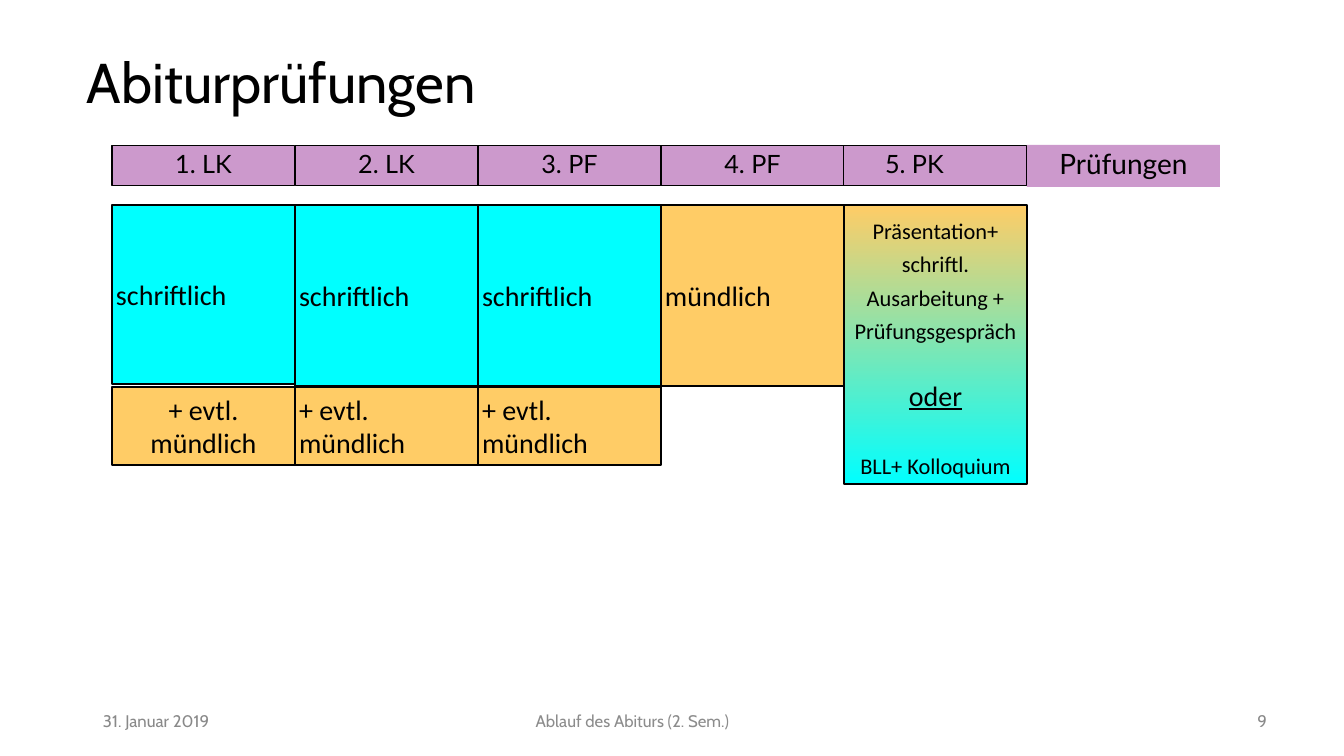
"""Build the slide about the parts of the Abitur examinations."""
from lxml.etree import SubElement
from pptx import Presentation
from pptx.dml.color import RGBColor
from pptx.enum.shapes import MSO_SHAPE
from pptx.enum.text import MSO_ANCHOR, PP_ALIGN
from pptx.oxml.ns import qn
from pptx.util import Pt

SCALE = 914400 / 100.8
BLACK = RGBColor(0x00, 0x00, 0x00)
GREY = RGBColor(0x89, 0x89, 0x89)
FOOTER_GREY = RGBColor(0x8C, 0x8C, 0x8C)
PURPLE = RGBColor(0x80, 0x00, 0x80)
CYAN = RGBColor(0x00, 0xFF, 0xFF)
ORANGE = RGBColor(0xFF, 0xCC, 0x66)
LEFT, CENTER, RIGHT = PP_ALIGN.LEFT, PP_ALIGN.CENTER, PP_ALIGN.RIGHT

TITLE = "Abiturprüfungen"
EXAMS = ["1. LK", "2. LK", "3. PF", "4. PF", ""]
FIFTH_EXAM = "5. PK"
HEADER_END = "Prüfungen"
FORMS = [("schriftlich", CYAN, 179), ("schriftlich", CYAN, 181),
         ("schriftlich", CYAN, 181), ("mündlich", ORANGE, 181)]
EXTRA = "+ evtl. mündlich"
EXTRA_ALIGNS = [CENTER, LEFT, LEFT]
FIFTH_FORMS = [
    ("Präsentation+\nschriftl. Ausarbeitung + Prüfungsgespräch", 16, False, 0),
    ("oder", 20, True, 24),
    ("BLL+ Kolloquium", 16, False, 24),
]
FOOTERS = [("31. Januar 2019", 93, 223, LEFT, GREY),
           ("Ablauf des Abiturs (2. Sem.)", 323, 619, CENTER, FOOTER_GREY),
           ("9", 964, 313, RIGHT, GREY)]

COLUMN_LEFT, COLUMN_WIDTH = 112, 183
HEADER_TOP, HEADER_HEIGHT = 146, 40
FORM_TOP, EXTRA_TOP, EXTRA_HEIGHT = 205, 387, 78
FIFTH_HEIGHT = 279
FOOTER_TOP, FOOTER_HEIGHT = 701, 40


def px(length):
    return round(length * SCALE)


def column(index):
    return COLUMN_LEFT + index * COLUMN_WIDTH


def write(box, text, size=18, font="Lato", color=BLACK, align=LEFT,
          anchor=MSO_ANCHOR.TOP, spacing=None, before=0, underline=False,
          side=10, wrap=True, more=False):
    frame = box.text_frame
    frame.word_wrap = wrap
    frame.vertical_anchor = anchor
    frame.margin_left = frame.margin_right = px(side)
    frame.margin_top = frame.margin_bottom = px(5)
    para = frame.add_paragraph() if more else frame.paragraphs[0]
    para.text = text
    para.alignment = align
    para.line_spacing = spacing
    para.space_before = Pt(before)
    for span in para.runs:
        span.font.name = font
        span.font.size = Pt(size)
        span.font.color.rgb = color
        span.font.underline = underline


def text_box(page, left, top, width, height, text, **style):
    box = page.shapes.add_textbox(px(left), px(top), px(width), px(height))
    write(box, text, **style)


def rectangle(page, left, top, width, height, fill, line=1, opacity=100):
    box = page.shapes.add_shape(MSO_SHAPE.RECTANGLE, px(left), px(top),
                                px(width), px(height))
    box.shadow.inherit = False
    box.fill.solid()
    box.fill.fore_color.rgb = fill
    if opacity < 100:
        color = box.fill._xPr.find(".//" + qn("a:srgbClr"))
        SubElement(color, qn("a:alpha")).set("val", str(opacity * 1000))
    if line:
        box.line.color.rgb = BLACK
        box.line.width = Pt(line)
    else:
        box.line.fill.background()
    return box


def add_header(page):
    for index, exam in enumerate(EXAMS):
        box = rectangle(page, column(index), HEADER_TOP, COLUMN_WIDTH,
                        HEADER_HEIGHT, PURPLE, line=0.75, opacity=40)
        if exam:
            write(box, exam, align=CENTER, spacing=0.93)
    end = rectangle(page, column(len(EXAMS)), HEADER_TOP - 1, 193,
                    HEADER_HEIGHT + 2, PURPLE, line=0, opacity=40)
    write(end, HEADER_END, size=20, align=CENTER, spacing=0.93)
    text_box(page, 875, HEADER_TOP, 83, 39, FIFTH_EXAM, spacing=0.93, wrap=False)


def add_forms(page):
    cell_style = dict(font="Calibri", spacing=Pt(24), side=4)
    for index, (form, fill, height) in enumerate(FORMS):
        box = rectangle(page, column(index), FORM_TOP, COLUMN_WIDTH, height, fill)
        write(box, form, size=20, anchor=MSO_ANCHOR.MIDDLE, **cell_style)

    fifth = rectangle(page, column(len(FORMS)), FORM_TOP, COLUMN_WIDTH,
                      FIFTH_HEIGHT, ORANGE)
    fifth.fill.gradient()
    fifth.fill.gradient_angle = 270
    for stop, color in zip(fifth.fill.gradient_stops, (ORANGE, CYAN)):
        stop.color.rgb = color
    for index, (form, size, underline, before) in enumerate(FIFTH_FORMS):
        write(fifth, form, size=size, underline=underline, before=before,
              align=CENTER, more=index > 0, **cell_style)

    for index, align in enumerate(EXTRA_ALIGNS):
        box = rectangle(page, column(index), EXTRA_TOP, COLUMN_WIDTH,
                        EXTRA_HEIGHT, ORANGE)
        write(box, EXTRA, size=20, align=align, **cell_style)


def main():
    deck = Presentation()
    deck.slide_width, deck.slide_height = px(1344), px(756)
    page = deck.slides.add_slide(deck.slide_layouts[6])
    text_box(page, 77, 40, 1175, 83, TITLE, size=40, font="Cabin",
             anchor=MSO_ANCHOR.MIDDLE)
    add_header(page)
    add_forms(page)
    for text, left, width, align, color in FOOTERS:
        text_box(page, left, FOOTER_TOP, width, FOOTER_HEIGHT, text, size=12,
                 font="Cabin", color=color, align=align, anchor=MSO_ANCHOR.MIDDLE)
    deck.save("out.pptx")


if __name__ == "__main__":
    main()
